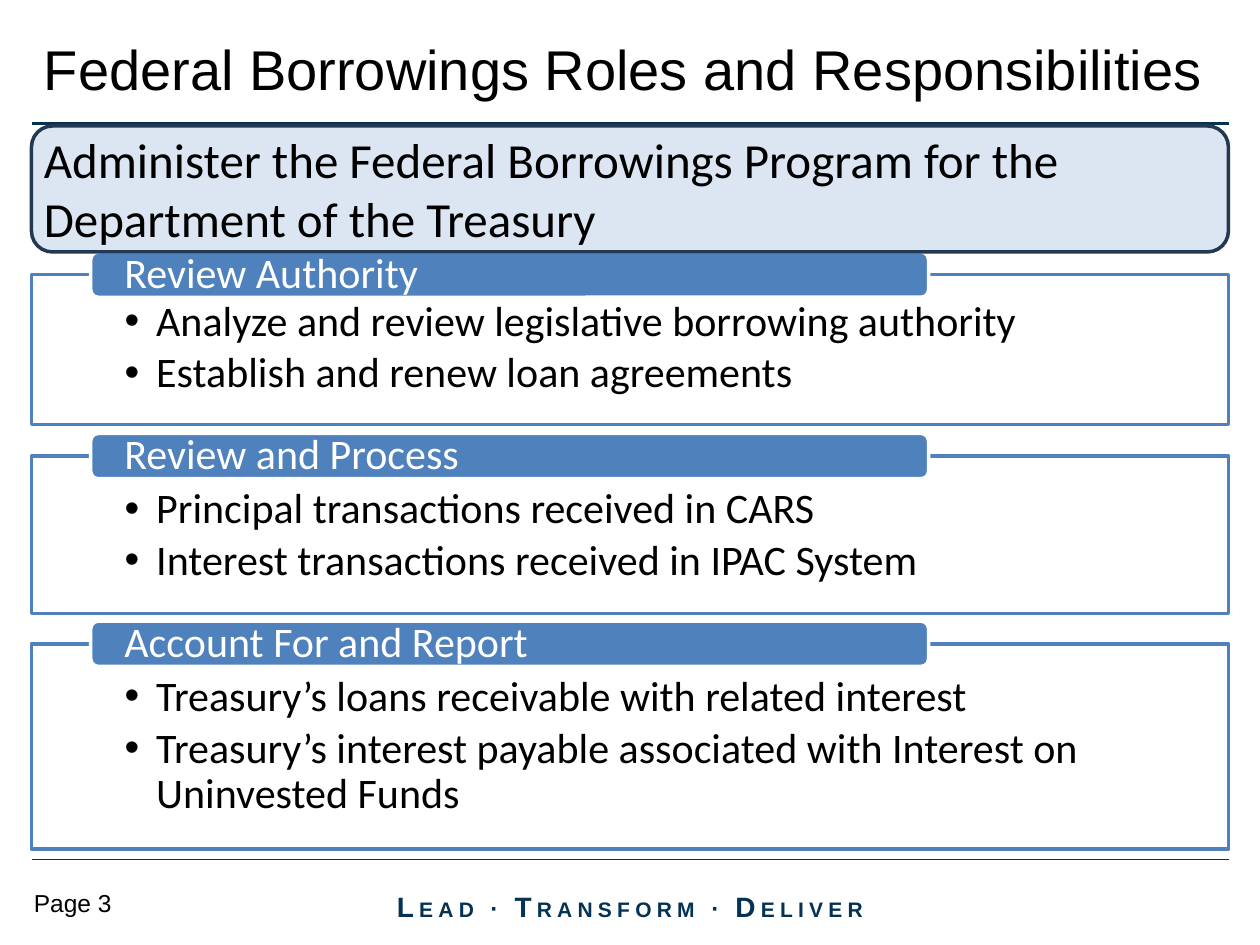
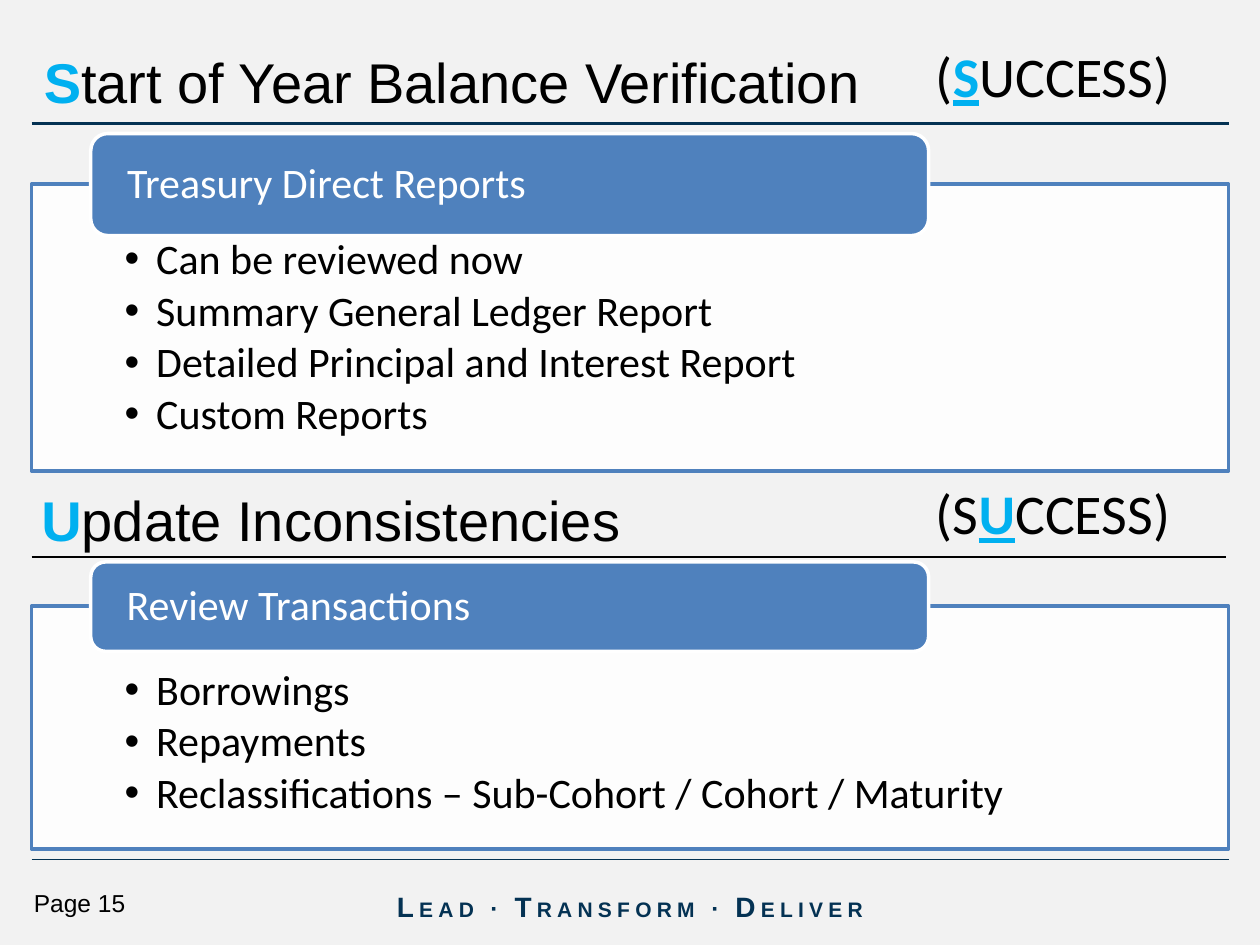
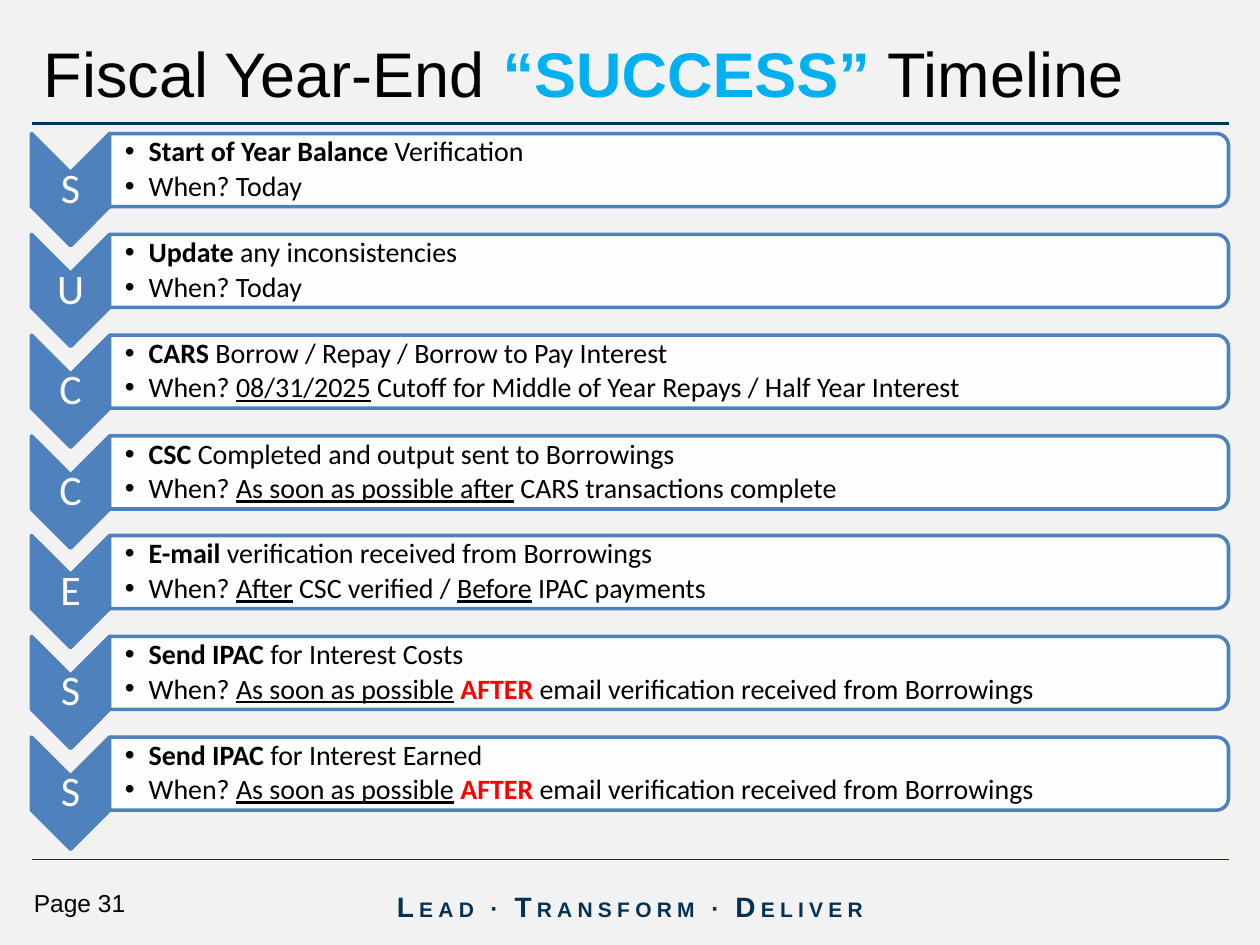
"""Build three slides on federal borrowings roles and the year-end timeline."""
from dataclasses import dataclass

from lxml.etree import SubElement
from pptx import Presentation
from pptx.dml.color import RGBColor
from pptx.enum.shapes import MSO_CONNECTOR as CONN, MSO_SHAPE as SHAPE
from pptx.enum.text import MSO_ANCHOR as ANCHOR, PP_ALIGN as ALIGN
from pptx.oxml.ns import qn
from pptx.util import Emu, Pt


@dataclass(frozen=True)
class Theme:
    """Colours, fonts and type sizes."""
    navy: str = "043253"
    blue: str = "4F81BD"
    accent: str = "00B0F0"
    alert: str = "FF0000"
    ink: str = "000000"
    paper: str = "FFFFFF"
    grey: str = "F2F2F2"
    pale: str = "DCE6F2"
    banner_edge: str = "233953"
    head_font: str = "Arial"
    body_font: str = "Calibri"
    title: int = 32
    title_big: int = 36
    banner: int = 28
    body: int = 24
    row: int = 16
    page: int = 14
    border: int = 2


T = Theme()
PX = 9144
LEFT, WIDTH = 25, 950

MOTTO = [("L", 16), ("EAD ", 12), ("∙ ", 14), ("T", 16), ("RANSFORM ", 12),
         ("∙ ", 14), ("D", 16), ("ELIVER", 12)]

ROLES_TITLE = [("Federal Borrowings Roles and Responsibilities", "")]
ROLES_BANNER = "Administer the Federal Borrowings Program for the Department of the Treasury"
ROLES_PANELS = [
    dict(top=218, height=119, tab=36, pad=20, head="Review Authority", items=[
        "Analyze and review legislative borrowing authority",
        "Establish and renew loan agreements"]),
    dict(top=362, height=125, tab=36, pad=25, head="Review and Process", items=[
        "Principal transactions received in CARS",
        "Interest transactions received in IPAC System"]),
    dict(top=511, height=163, tab=36, pad=25, head="Account For and Report", items=[
        "Treasury’s loans receivable with related interest",
        "Treasury’s interest payable associated with Interest on Uninvested Funds"]),
]

STEP_HEADS = [
    dict(box=(25, 28, 950, 64), title=[("S", "key"), ("tart of Year Balance Verification", "")],
         word=[("(", ""), ("S", "key u"), ("UCCESS)", "")]),
    dict(box=(23, 375, 950, 67), title=[("U", "key"), ("pdate Inconsistencies", "")],
         word=[("(S", ""), ("U", "key u"), ("CCESS)", "")]),
]
STEP_PANELS = [
    dict(top=146, height=228, tab=81, pad=43, head="Treasury Direct Reports", items=[
        "Can be reviewed now", "Summary General Ledger Report",
        "Detailed Principal and Interest Report", "Custom Reports"]),
    dict(top=481, height=193, tab=71, pad=50, head="Review Transactions", items=[
        "Borrowings", "Repayments", "Reclassifications – Sub-Cohort / Cohort / Maturity"]),
]

TIMELINE_TITLE = [("Fiscal Year-End ", ""), ("“SUCCESS” ", "key"), ("Timeline", "")]
TODAY = [("When? Today", "")]
SEND_WHEN = [("When? ", ""), ("As soon as possible", "u"), (" ", ""), ("AFTER", "alert"),
             (" email verification received from Borrowings", "")]
TIMELINE = [
    ("S", [("Start of Year Balance ", "b"), ("Verification", "")], TODAY),
    ("U", [("Update", "b"), (" any inconsistencies", "")], TODAY),
    ("C", [("CARS", "b"), (" Borrow / Repay / Borrow to Pay Interest", "")],
     [("When? ", ""), ("08/31/2025", "u"),
      (" Cutoff for Middle of Year Repays / Half Year Interest", "")]),
    ("C", [("CSC", "b"), (" Completed and output sent to Borrowings", "")],
     [("When? ", ""), ("As soon as possible after", "u"),
      (" CARS transactions complete", "")]),
    ("E", [("E-mail", "b"), (" verification received from Borrowings", "")],
     [("When? ", ""), ("After", "u"), (" CSC verified / ", ""), ("Before", "u"),
      (" IPAC payments", "")]),
    ("S", [("Send IPAC ", "b"), ("for Interest Costs", "")], SEND_WHEN),
    ("S", [("Send IPAC ", "b"), ("for Interest Earned", "")], SEND_WHEN),
]


def rgb(color):
    """Turn a hex string into a colour."""
    return RGBColor.from_string(color)


def emu(*lengths):
    """Turn px into EMU."""
    return [Emu(round(n * PX)) for n in lengths]


def style_run(r, size, font, color, marks=""):
    """Format one run, with marks for emphasis."""
    marks = marks.split()
    f = r.font
    f.size, f.name = Pt(size), font
    f.color.rgb = rgb(T.accent if "key" in marks else T.alert if "alert" in marks else color)
    f.bold = bool({"b", "key", "alert"} & set(marks))
    f.underline = "u" in marks


def set_frame(s, insets=(10, 5, 10, 5), anchor=ANCHOR.TOP):
    """Set wrapping, insets and anchor, and return the text frame."""
    tf = s.text_frame
    tf.word_wrap = True
    tf.margin_left, tf.margin_top, tf.margin_right, tf.margin_bottom = emu(*insets)
    tf.vertical_anchor = anchor
    return tf


def write(tf, paras, size, font=T.body_font, color=T.ink, align=ALIGN.LEFT,
          tight=False, indent=0):
    """Write paragraphs of marked runs, bulleted when an indent is given."""
    for i, runs in enumerate(paras):
        p = tf.paragraphs[0] if i == 0 else tf.add_paragraph()
        p.alignment = align
        if tight:
            p.line_spacing = 0.9
        if indent:
            p.space_after = Pt(size * 0.15)
            pPr = p._p.get_or_add_pPr()
            pPr.set("marL", str(indent * PX))
            pPr.set("indent", str(-indent * PX))
            SubElement(pPr, qn("a:buFont")).set("typeface", T.head_font)
            SubElement(pPr, qn("a:buChar")).set("char", "•")
        for text, marks in runs:
            r = p.add_run()
            r.text = text
            style_run(r, size, font, color, marks)


def add_text(slide, box, paras, size, insets=(10, 5, 10, 5), anchor=ANCHOR.TOP, **kw):
    """Add a text box."""
    s = slide.shapes.add_textbox(*emu(*box))
    write(set_frame(s, insets, anchor), paras, size, **kw)


def add_box(slide, kind, box, fill, line, alpha=None, quarter_turn=False):
    """Add a preset shape; a quarter turn keeps the visible box."""
    x, y, w, h = box
    if quarter_turn:
        x, y, w, h = x + (w - h) / 2, y + (h - w) / 2, h, w
    s = slide.shapes.add_shape(kind, *emu(x, y, w, h))
    s.rotation = 90 if quarter_turn else 0
    s.shadow.inherit = False
    s.fill.solid()
    s.fill.fore_color.rgb = rgb(fill)
    if alpha:
        color = s._element.spPr.find(qn("a:solidFill"))[0]
        SubElement(color, qn("a:alpha")).set("val", str(alpha * 1000))
    s.line.color.rgb = rgb(line)
    s.line.width = Pt(T.border)
    return s


def add_rule(slide, y, color, weight, width=WIDTH):
    """Add a horizontal rule."""
    s = slide.shapes.add_connector(CONN.STRAIGHT, *emu(LEFT, y, LEFT + width, y))
    s.line.color.rgb = rgb(color)
    s.line.width = Pt(weight)
    SubElement(s._element.spPr, qn("a:effectLst"))


def add_title(slide, runs, size=T.title, box=(25, 17, 950, 75)):
    """Add a slide or section title."""
    add_text(slide, box, [runs], size, insets=(10, 10, 10, 5), font=T.head_font)


def add_base(prs, page, background):
    """Add a slide with background, rules, motto and page number."""
    slide = prs.slides.add_slide(prs.slide_layouts[6])
    slide.background.fill.solid()
    slide.background.fill.fore_color.rgb = rgb(background)
    add_rule(slide, 682, T.navy, 0.75)
    add_rule(slide, 98, T.navy, 2.25)
    tf = set_frame(slide.shapes.add_textbox(*emu(283, 699, 434, 40)), anchor=ANCHOR.MIDDLE)
    p = tf.paragraphs[0]
    p.alignment = ALIGN.CENTER
    for text, size in MOTTO:
        r = p.add_run()
        r.text = text
        style_run(r, size, T.head_font, T.navy, "b")
        r._r.get_or_add_rPr().set("spc", "300")
    add_text(slide, (17, 700, 125, 33), [[(f"Page {page}", "")]], T.page, font=T.head_font)
    return slide


def add_panel(slide, top, height, tab, pad, head, items):
    """Add a bulleted frame with a heading tab across its top edge."""
    s = add_box(slide, SHAPE.RECTANGLE, (LEFT, top, WIDTH, height), T.paper, T.blue, alpha=90)
    write(set_frame(s, (74, pad, 74, 19)), [[(item, "")] for item in items], T.body,
          tight=True, indent=25)
    s = add_box(slide, SHAPE.ROUNDED_RECTANGLE, (72, top - tab // 2, 665, tab), T.blue, T.paper)
    write(set_frame(s, (25, 0, 25, 0), ANCHOR.MIDDLE), [[(head, "")]], T.body,
          color=T.paper, tight=True)


def build_roles(prs):
    """Roles and responsibilities."""
    slide = add_base(prs, 3, T.paper)
    for panel in ROLES_PANELS:
        add_panel(slide, **panel)
    add_title(slide, ROLES_TITLE)
    add_box(slide, SHAPE.ROUNDED_RECTANGLE, (LEFT, 100, WIDTH, 100), T.pale, T.banner_edge)
    add_text(slide, (LEFT, 98, WIDTH, 104), [[(ROLES_BANNER, "")]], T.banner)


def build_steps(prs):
    """The first two steps."""
    slide = add_base(prs, 15, T.grey)
    for head in STEP_HEADS:
        add_title(slide, head["title"], box=head["box"])
        add_text(slide, (733, head["box"][1], 217, 64), [head["word"]], T.title)
    add_rule(slide, 442, T.ink, 1.5, width=948)
    for panel in STEP_PANELS:
        add_panel(slide, **panel)


def build_timeline(prs):
    """The seven-step timeline."""
    slide = add_base(prs, 31, T.grey)
    arrow_w, last = 62, len(TIMELINE) - 1
    row_x, row_w = LEFT + arrow_w, WIDTH - arrow_w
    for i, (letter, what, when) in enumerate(TIMELINE):
        y = 106 + round(479 * i / last)
        add_box(slide, SHAPE.CHEVRON, (LEFT, y, arrow_w, 89), T.blue, T.blue, quarter_turn=True)
        add_text(slide, (LEFT, y + 31, arrow_w, 27), [[(letter, "")]], T.body,
                 insets=(2, 2, 2, 2), anchor=ANCHOR.MIDDLE, color=T.paper,
                 align=ALIGN.CENTER, tight=True)
        add_box(slide, SHAPE.ROUND_2_SAME_RECTANGLE, (row_x, y, row_w, 58), T.paper, T.blue,
                alpha=90, quarter_turn=True)
        add_text(slide, (row_x, y + 3, row_w - 3, 52), [what, when], T.row,
                 insets=(12, 1, 1, 1), anchor=ANCHOR.MIDDLE, tight=True, indent=19)
    add_title(slide, TIMELINE_TITLE, T.title_big)


def main():
    """Build and save the deck."""
    prs = Presentation()
    prs.slide_width, prs.slide_height = emu(1000, 750)
    build_roles(prs)
    build_steps(prs)
    build_timeline(prs)
    prs.save("out.pptx")


if __name__ == "__main__":
    main()
